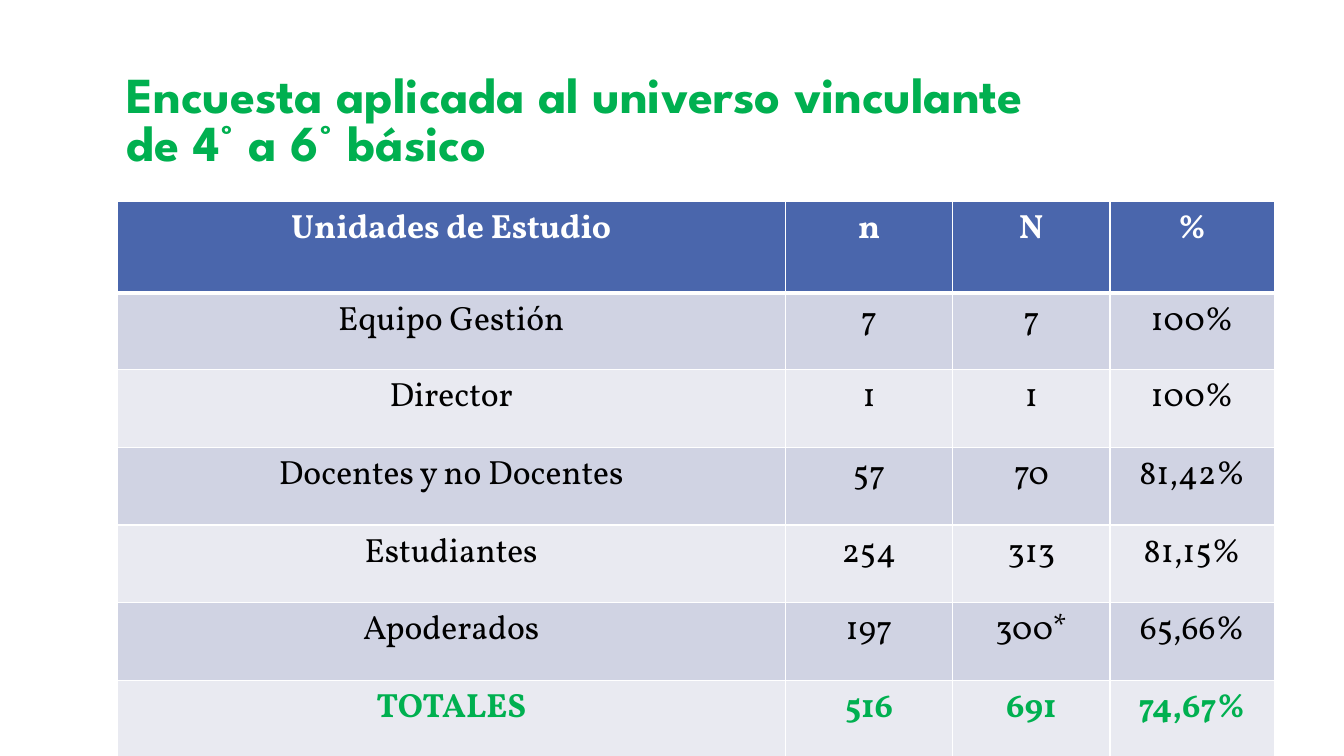
from pptx import Presentation
from pptx.dml.color import RGBColor
from pptx.enum import text
from pptx.oxml.ns import qn
from pptx.util import Inches, Pt
from lxml import etree

GREEN = RGBColor(0x00, 0xB0, 0x50)
BLUE = RGBColor(0x4A, 0x66, 0xAC)
DARK_BAND = RGBColor(0xD0, 0xD3, 0xE3)
LIGHT_BAND = RGBColor(0xE9, 0xEA, 0xF1)
WHITE = RGBColor(0xFF, 0xFF, 0xFF)
BLACK = RGBColor(0x00, 0x00, 0x00)

TITLE = "Encuesta aplicada al universo vinculante de 4° a 6° básico"
ROWS = [
    ("Unidades de Estudio", "n", "N", "%"),
    ("Equipo Gestión", "7", "7", "100%"),
    ("Director", "1", "1", "100%"),
    ("Docentes y no Docentes", "57", "70", "81,42%"),
    ("Estudiantes", "254", "313", "81,15%"),
    ("Apoderados", "197", "300*", "65,66%"),
    ("TOTALES", "516", "691", "74,67%"),
]
COL_WIDTHS = [6.63, 1.66, 1.56, 1.63]
ROW_HEIGHTS = [0.91, 0.76] + [0.77] * 5

TITLE_FONT = {"name": "League Spartan", "size": Pt(36), "bold": True}
CELL_FONT = {"name": "Vollkorn", "size": Pt(24)}


def write(tf, content, color, font, **paragraph_format):
    p = tf.paragraphs[0]
    for name, value in paragraph_format.items():
        setattr(p, name, value)
    r = p.add_run()
    r.text = content
    for name, value in font.items():
        setattr(r.font, name, value)
    r.font.color.rgb = color


def add_title(s):
    sp = s.shapes.add_textbox(Inches(1.16), Inches(0.58), Inches(9.5), Inches(1.17))
    tf = sp.text_frame
    tf.word_wrap = True
    tf.vertical_anchor = text.MSO_ANCHOR.BOTTOM
    write(tf, TITLE, GREEN, TITLE_FONT, line_spacing=0.8)


def set_borders(cell, widths):
    tc_pr = cell._tc.get_or_add_tcPr()
    for side, width in widths.items():
        ln = etree.SubElement(tc_pr, qn(f"a:ln{side}"), w=str(Pt(width)))
        fill = etree.SubElement(ln, qn("a:solidFill"))
        etree.SubElement(fill, qn("a:srgbClr"), val=str(WHITE))


def row_style(i):
    """Return fill, text colour and weight of a table row."""
    if i == 0:
        return BLUE, WHITE, True
    band = DARK_BAND if i % 2 else LIGHT_BAND
    is_total = i == len(ROWS) - 1
    return band, GREEN if is_total else BLACK, is_total


def add_survey_table(s):
    frame = s.shapes.add_table(len(ROWS), len(COL_WIDTHS), Inches(1.16), Inches(2),
                               Inches(sum(COL_WIDTHS)), Inches(sum(ROW_HEIGHTS)))
    table = frame.table
    for column, width in zip(table.columns, COL_WIDTHS):
        column.width = Inches(width)
    for i, (values, height) in enumerate(zip(ROWS, ROW_HEIGHTS)):
        table.rows[i].height = Inches(height)
        band, color, bold = row_style(i)
        # The rule under the header is thicker than the others
        borders = {"L": 1, "R": 1, "T": 3 if i == 1 else 1, "B": 3 if i == 0 else 1}
        for j, value in enumerate(values):
            cell = table.cell(i, j)
            set_borders(cell, borders)
            cell.fill.solid()
            cell.fill.fore_color.rgb = band
            write(cell.text_frame, value, color, {**CELL_FONT, "bold": bold},
                  alignment=text.PP_ALIGN.CENTER)


def main():
    prs = Presentation()
    prs.slide_width, prs.slide_height = Inches(13.33), Inches(7.5)
    s = prs.slides.add_slide(prs.slide_layouts[6])
    add_title(s)
    add_survey_table(s)
    prs.save("out.pptx")


if __name__ == "__main__":
    main()
